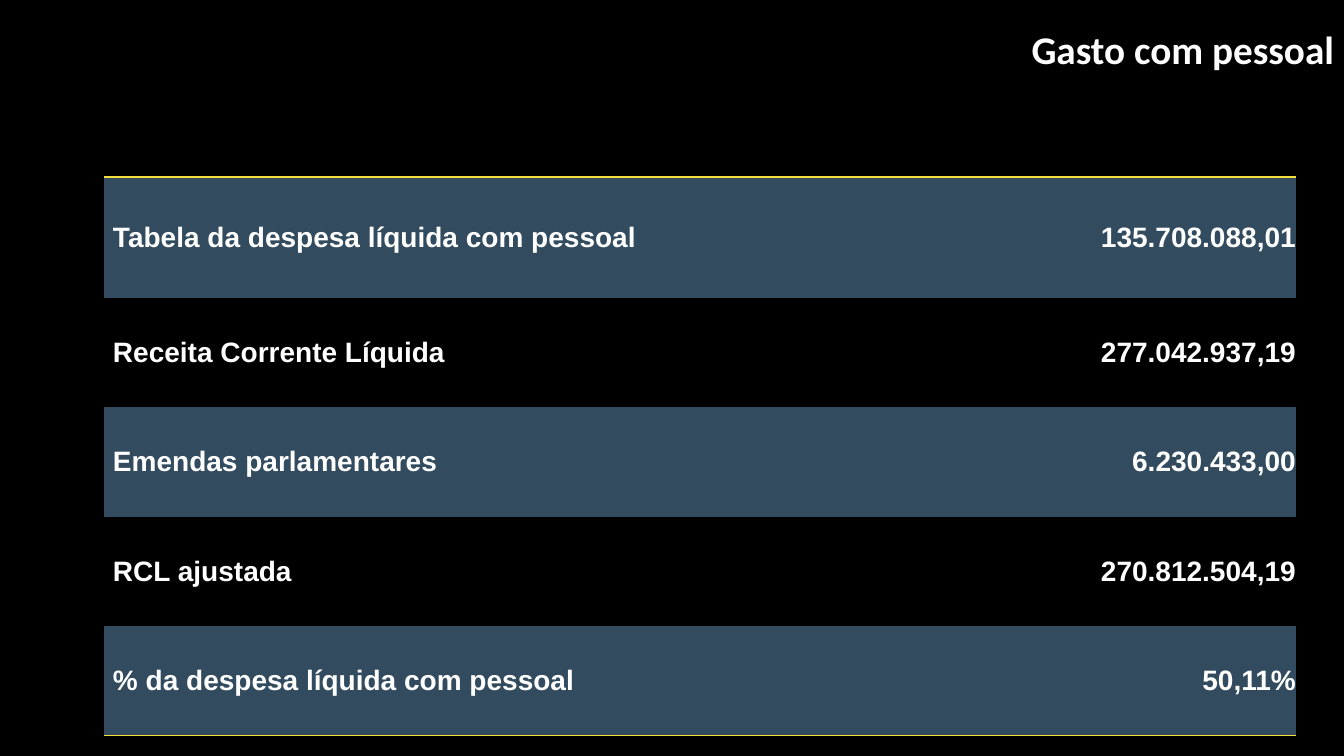
from dataclasses import dataclass

from lxml.etree import SubElement
from pptx import Presentation
from pptx.dml.color import RGBColor
from pptx.enum.text import MSO_ANCHOR, MSO_AUTO_SIZE, PP_ALIGN
from pptx.oxml.ns import qn
from pptx.util import Emu, Pt


@dataclass(frozen=True)
class Theme:
    background: str = "000000"
    text: str = "FFFFFF"
    band: str = "324B5F"
    rule: str = "F4DE3A"
    title_font: str = "Calibri"
    table_font: str = "Arial"
    title_size: int = 28
    table_size: int = 20
    rule_width: int = 1
    plain_table_style: str = "{2D5ABB26-0587-4C30-8999-92F81FD0307C}"


def px(length):
    return Emu(round(length * 914400 / 100.8))


class SlideBuilder:
    """Draws themed elements on one slide, with lengths in px."""

    def __init__(self, presentation, theme):
        self.theme = theme
        self.slide = presentation.slides.add_slide(presentation.slide_layouts[5])
        fill = self.slide.background.fill
        fill.solid()
        fill.fore_color.rgb = RGBColor.from_string(theme.background)

    def style(self, paragraph, font_name, size, alignment):
        paragraph.alignment = alignment
        font = paragraph.font
        font.name = font_name
        font.size = Pt(size)
        font.bold = True
        font.color.rgb = RGBColor.from_string(self.theme.text)

    def title(self, text, left, top, width, height):
        shape = self.slide.shapes.title
        shape.left, shape.top = px(left), px(top)
        shape.width, shape.height = px(width), px(height)
        frame = shape.text_frame
        frame.text = text
        frame.word_wrap = True
        frame.auto_size = MSO_AUTO_SIZE.SHAPE_TO_FIT_TEXT
        frame.vertical_anchor = MSO_ANCHOR.TOP
        self.style(frame.paragraphs[0], self.theme.title_font,
                   self.theme.title_size, PP_ALIGN.RIGHT)

    def border(self, cell, tag):
        properties = cell._tc.get_or_add_tcPr()
        line = SubElement(properties, qn(tag), w=str(Pt(self.theme.rule_width)))
        fill = SubElement(line, qn("a:solidFill"))
        SubElement(fill, qn("a:srgbClr"), val=self.theme.rule)
        properties.insert(0, line)

    def cell(self, cell, text, alignment, indent, banded):
        cell.text = text
        cell.vertical_anchor = MSO_ANCHOR.MIDDLE
        cell.margin_left = px(indent)
        cell.margin_top = cell.margin_right = cell.margin_bottom = 0
        self.style(cell.text_frame.paragraphs[0], self.theme.table_font,
                   self.theme.table_size, alignment)
        if banded:
            cell.fill.solid()
            cell.fill.fore_color.rgb = RGBColor.from_string(self.theme.band)
        else:
            cell.fill.background()

    def table(self, rows, left, top, column_widths, row_heights):
        frame = self.slide.shapes.add_table(
            len(rows), len(column_widths), px(left), px(top),
            px(sum(column_widths)), px(sum(row_heights)))
        frame.element.xpath(".//a:tableStyleId")[0].text = self.theme.plain_table_style
        table = frame.table
        table.first_row = table.horz_banding = False
        for column, width in zip(table.columns, column_widths):
            column.width = px(width)
        for index, (label, value) in enumerate(rows):
            table.rows[index].height = px(row_heights[index])
            banded = index % 2 == 0
            self.cell(table.cell(index, 0), label, PP_ALIGN.LEFT, 9, banded)
            self.cell(table.cell(index, 1), value, PP_ALIGN.RIGHT, 0, banded)
        for column in range(len(column_widths)):
            self.border(table.cell(0, column), "a:lnT")
            self.border(table.cell(len(rows) - 1, column), "a:lnB")


def main():
    presentation = Presentation()
    presentation.slide_width, presentation.slide_height = px(1344), px(756)
    builder = SlideBuilder(presentation, Theme())
    builder.title("Gasto com pessoal", 495, 20, 849, 58)
    spending = [
        ("Tabela da despesa líquida com pessoal", "135.708.088,01"),
        ("Receita Corrente Líquida", "277.042.937,19"),
        ("Emendas parlamentares", "6.230.433,00"),
        ("RCL ajustada", "270.812.504,19"),
        ("% da despesa líquida com pessoal", "50,11%"),
    ]
    builder.table(spending, 104, 177, [826, 366], [121, 109, 110, 109, 110])
    presentation.save("out.pptx")


if __name__ == "__main__":
    main()
